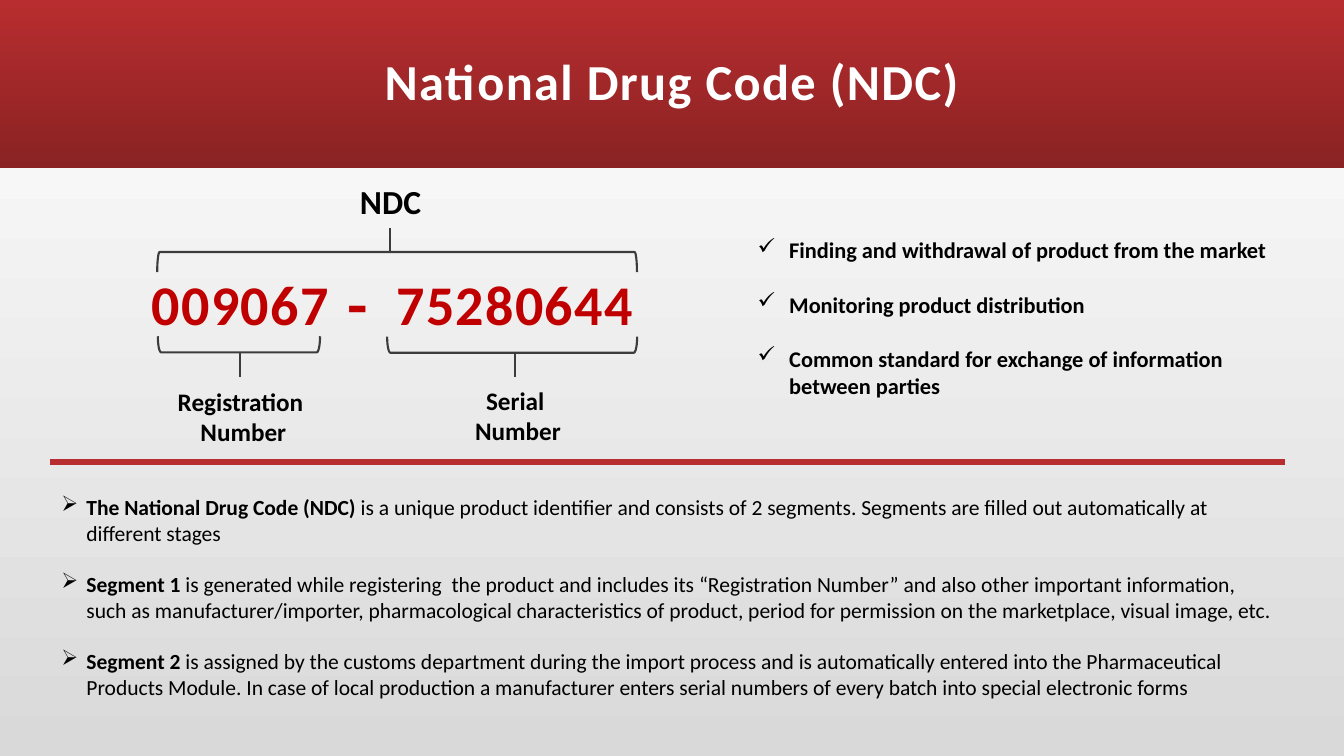
from lxml import etree
from pptx import Presentation
from pptx.dml.color import RGBColor
from pptx.enum import shapes, text
from pptx.oxml import ns
from pptx.util import Pt

# Content: boxes are (left, top, width, height) in points
TITLE = ("National Drug Code (NDC)", (84, 0, 792, 120))
CODE_PARTS = [  # words, box, type style
    ("009067", (95.8, 201.6, 151.9, 30.2), "digits"),
    ("-", (239.8, 201.6, 27.4, 30.2), "dash"),
    ("75280644", (258.5, 201.6, 218.2, 30.2), "digits"),
]
LABELS = [
    ("NDC", (249.8, 126, 58.3, 36), "ndc"),
    ("Registration \nNumber", (84.2, 272.2, 179.3, 51.1), "label"),
    ("Serial \nNumber", (331.9, 271.4, 76.3, 51.1), "label"),
]
BRACKETS = [  # left, top, width, depth, rotation, corner, stem x
    (112.3, 180, 342.7, 14.4, 270, 0.12, 278.6),
    (112.7, 240.2, 115.9, 11.5, 90, 0.205, 171.4),
    (276.5, 240.5, 178.6, 11.5, 90, 0.205, 367.9),
]
STEM = 17.3
DIVIDER = (36, 330, 918, 330)
USES = [
    ("Finding and withdrawal of product from the market", ""),
    ("Monitoring product distribution", ""),
    ("Common standard for exchange of information between parties", ""),
]
SEGMENTS = [
    ("The National Drug Code (NDC) ",
     "is a unique product identifier and consists of 2 segments. Segments are "
     "filled out automatically at different stages"),
    ("Segment 1 ",
     "is generated while registering  the product and includes its “Registration "
     "Number” and also other important information, such as manufacturer/importer, "
     "pharmacological characteristics of product, period for permission on the "
     "marketplace, visual image, etc."),
    ("Segment 2 ",
     "is assigned by the customs department during the import process and is "
     "automatically entered into the Pharmaceutical Products Module. In case of "
     "local production a manufacturer enters serial numbers of every batch into "
     "special electronic forms"),
]
LISTS = [  # items, box, bullet, indent, gap, style, anchor
    (USES, (534.2, 154.1, 383.8, 145.4), "✓", 22.5, 19.5, "uses", "MIDDLE"),
    (SEGMENTS, (36.7, 349.2, 881.3, 167.8), "➢", 18, 18, "segments", "TOP"),
]

THEME = {
    "backdrop": ("FFFFFF", "D9D9D9"),
    "header": ("B82D2F", "8A2223"),
    "divider": ("B82D2F", 4),
    "bracket": ("3C3C3C", 1.5),
    # style: font, size, colour, letter spacing
    "title": ("Calibri", 36, "FFFFFF", 1),
    "digits": ("Calibri", 40, "C00000", 1),
    "dash": ("Lato", 45, "C00000", 0),
    "ndc": ("Calibri", 24, "000000", 0),
    "label": ("Calibri", 18, "000000", 0),
    "uses": ("Calibri", 16, "000000", 0),
    "segments": ("Calibri", 15.4, "000000", 0),
}

deck = Presentation()
deck.slide_width, deck.slide_height = Pt(960), Pt(540)
slide = deck.slides.add_slide(deck.slide_layouts[6])


def points(values):
    return [Pt(value) for value in values]


def shade(fill, colours):
    fill.gradient()
    fill.gradient_angle = 270
    for stop, colour in zip(fill.gradient_stops, colours):
        stop.color.rgb = RGBColor.from_string(colour)


def stroke(line, style):
    colour, width = THEME[style]
    line.color.rgb = RGBColor.from_string(colour)
    line.width = Pt(width)


def style_run(run, style, bold=True):
    name, size, colour, spacing = THEME[style]
    run.font.name, run.font.size, run.font.bold = name, Pt(size), bold
    run.font.color.rgb = RGBColor.from_string(colour)
    if spacing:
        run.font._element.set("spc", str(spacing * 100))


def add_frame(box, anchor="MIDDLE", wrap=True):
    frame = slide.shapes.add_textbox(*points(box)).text_frame
    frame.word_wrap = wrap
    frame.vertical_anchor = text.MSO_ANCHOR[anchor]
    return frame


def add_centred(words, box, style, anchor="MIDDLE", wrap=True):
    frame = add_frame(box, anchor, wrap)
    frame.text = words
    for paragraph in frame.paragraphs:
        paragraph.alignment = text.PP_ALIGN.CENTER
        for run in paragraph.runs:
            style_run(run, style)
    return frame


def add_line(ends, style):
    line = slide.shapes.add_connector(shapes.MSO_CONNECTOR.STRAIGHT, *points(ends))
    stroke(line.line, style)
    etree.SubElement(line._element.spPr, ns.qn("a:effectLst"))


def add_list(items, box, bullet, indent, gap, style, anchor):
    frame = add_frame(box, anchor)
    for index, (lead, rest) in enumerate(items):
        paragraph = frame.add_paragraph() if index else frame.paragraphs[0]
        if index:
            paragraph.space_before = Pt(gap)
        properties = paragraph._p.get_or_add_pPr()
        properties.set("marL", str(int(Pt(indent))))
        properties.set("indent", str(-int(Pt(indent))))
        etree.SubElement(properties, ns.qn("a:buChar")).set("char", bullet)
        for words, bold in ((lead, True), (rest, False)):
            if words:
                run = paragraph.add_run()
                run.text = words
                style_run(run, style, bold)


# Background and header band
shade(slide.background.fill, THEME["backdrop"])
header = slide.shapes.add_shape(shapes.MSO_SHAPE.RECTANGLE, *points((0, 0, 960, 120)))
header.shadow.inherit = False
header.line.fill.background()
shade(header.fill, THEME["header"])
add_centred(*TITLE, "title").paragraphs[0].line_spacing = 0.9

# Bulleted lists and the divider between them
for bullet_list in LISTS:
    add_list(*bullet_list)
add_line(DIVIDER, "divider")

# Code number
for words, box, style in CODE_PARTS:
    add_centred(words, box, style)

# Brackets, each turned about its centre, with a stem from its spine
for left, top, width, depth, rotation, corner, stem_x in BRACKETS:
    unturned = (left + (width - depth) / 2, top + (depth - width) / 2, depth, width)
    bracket = slide.shapes.add_shape(shapes.MSO_SHAPE.RIGHT_BRACKET, *points(unturned))
    bracket.shadow.inherit = False
    bracket.rotation = rotation
    bracket.adjustments[0] = corner
    bracket.fill.background()
    stroke(bracket.line, "bracket")
    spine, reach = (top, -STEM) if rotation == 270 else (top + depth, STEM)
    add_line((stem_x, spine, stem_x, spine + reach), "bracket")

# Bracket labels
for words, box, style in LABELS:
    add_centred(words, box, style, "TOP", wrap=False)

deck.save("out.pptx")
